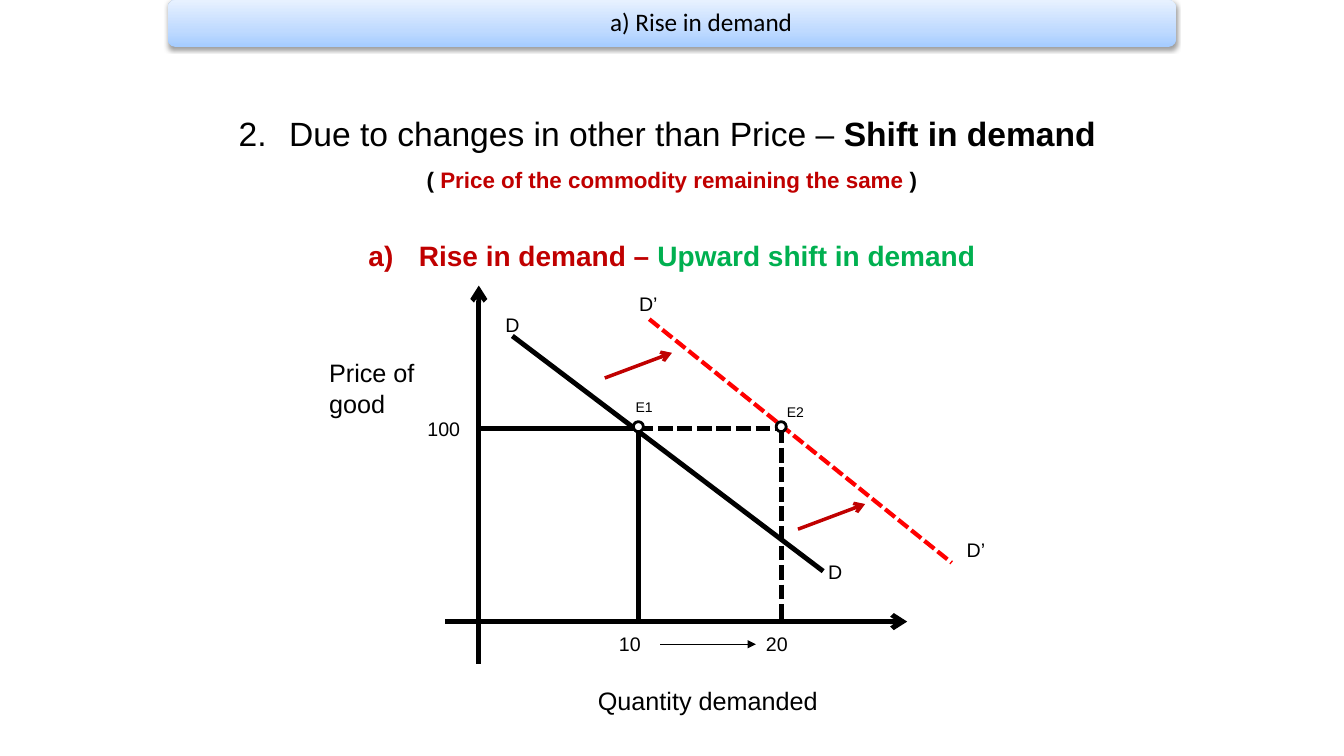
from lxml.etree import SubElement
from pptx import Presentation
from pptx.dml.color import RGBColor
from pptx.enum.dml import MSO_LINE_DASH_STYLE as Dash
from pptx.enum.shapes import MSO_CONNECTOR as Connector, MSO_SHAPE as Preset
from pptx.enum.text import MSO_ANCHOR as Anchor, PP_ALIGN as Align
from pptx.oxml.ns import qn
from pptx.util import Inches, Pt

COLUMNS, ROWS = 160, 90
CELL = Inches(1) / 12
BLACK, WHITE, RED, DARK_RED, GREEN = "000000", "FFFFFF", "FF0000", "C00000", "00B050"

# The diagram's columns and rows
PRICE_AXIS, QUANTITY_AXIS = 57, 74
OLD_QUANTITY, NEW_QUANTITY = 76, 93
PRICE = 51


def cells(*counts):
    return [round(count * CELL) for count in counts]


def color(hex_string):
    return RGBColor.from_string(hex_string)


def add_xml(parent, tag, **attributes):
    return SubElement(parent, qn(tag), {name: str(value) for name, value in attributes.items()})


def add_run(paragraph, text, size, hex_color=BLACK, bold=False, font="Arial"):
    run = paragraph.add_run()
    run.text = text
    run.font.name, run.font.size, run.font.bold = font, Pt(size), bold
    run.font.color.rgb = color(hex_color)


def add_label(slide, text, left, top, width, height, size=14):
    frame = slide.shapes.add_textbox(*cells(left, top, width, height)).text_frame
    frame.word_wrap = True
    add_run(frame.paragraphs[0], text, size)


def add_line(slide, start, end, hex_color=BLACK, width=3.5, dash=None, arrow=None):
    line = slide.shapes.add_connector(Connector.STRAIGHT, *cells(*start, *end))
    line.line.color.rgb = color(hex_color)
    line.line.width = Pt(width)
    if dash:
        line.line.dash_style = dash
    if arrow:
        add_xml(line.line._get_or_add_ln(), "a:tailEnd", type=arrow)
    add_xml(line._element.spPr, "a:effectLst")


def add_equilibrium(slide, column):
    size = 1.2
    marker = slide.shapes.add_shape(
        Preset.OVAL, *cells(column - size / 2, PRICE - 0.2 - size / 2, size, size))
    marker.shadow.inherit = False
    marker.fill.solid()
    marker.fill.fore_color.rgb = color(WHITE)
    marker.line.color.rgb = color(BLACK)
    marker.line.width = Pt(2)


def add_title_band(slide):
    band = slide.shapes.add_shape(Preset.ROUNDED_RECTANGLE, *cells(20, 0, 120, 5.6))
    band.line.fill.background()
    band.fill.background()
    properties = band._element.spPr

    gradient = properties.makeelement(qn("a:gradFill"), {"rotWithShape": "1"})
    stops = add_xml(gradient, "a:gsLst")
    for percent, hex_color in ((0, "A5CCFF"), (35, "BFDAFF"), (100, "E7F1FF")):
        add_xml(add_xml(stops, "a:gs", pos=percent * 1000), "a:srgbClr", val=hex_color)
    add_xml(gradient, "a:lin", ang=270 * 60000, scaled=0)
    properties.replace(properties.find(qn("a:noFill")), gradient)

    shadow = add_xml(add_xml(properties, "a:effectLst"), "a:outerShdw", blurRad=Pt(3.1),
                     dist=Pt(1.6), dir=90 * 60000, rotWithShape=0)
    add_xml(add_xml(shadow, "a:srgbClr", val=BLACK), "a:alpha", val=38000)

    frame = band.text_frame
    frame.vertical_anchor = Anchor.MIDDLE
    frame.margin_left, frame.margin_right = Inches(0.65), Inches(0.07)
    frame.margin_top = frame.margin_bottom = Inches(0.07)
    paragraph = frame.paragraphs[0]
    paragraph.alignment = Align.CENTER
    paragraph.line_spacing = 0.9
    add_run(paragraph, "a) Rise in demand", 18, font="Calibri")


def add_heading(paragraph, runs, size, numbering=None, space_before=0):
    """Fill a centred paragraph; numbering is a (scheme, first number) pair."""
    paragraph.alignment = Align.CENTER
    paragraph.line_spacing = 1.5
    paragraph.space_before = Pt(space_before)
    properties = paragraph._p.get_or_add_pPr()
    properties.set("marL", str(Inches(0.5)))
    properties.set("indent", str(-Inches(0.5)))
    if numbering:
        scheme, first = numbering
        add_xml(properties, "a:buFont", typeface="+mj-lt")
        add_xml(properties, "a:buAutoNum", type=scheme, startAt=first)
    for text, hex_color, bold in runs:
        add_run(paragraph, text, size, hex_color, bold)


def add_headings(slide):
    frame = slide.shapes.add_textbox(*cells(20, 10.4, 120, 22.2)).text_frame
    frame.word_wrap = True
    add_heading(frame.paragraphs[0], [
        ("Due to changes in other than Price – ", BLACK, False),
        ("Shift in demand ", BLACK, True)], 24, ("arabicPeriod", 2))
    add_heading(frame.add_paragraph(), [
        ("( ", BLACK, True),
        ("Price of the commodity remaining the same ", DARK_RED, True),
        (")", BLACK, True)], 16)
    add_heading(frame.add_paragraph(), [
        ("Rise in demand – ", DARK_RED, True),
        ("Upward shift in demand", GREEN, True)], 20, ("alphaLcParenR", 1), 20.7)


def add_diagram(slide):
    add_line(slide, (PRICE_AXIS, 79), (PRICE_AXIS, 34), arrow="arrow")
    add_line(slide, (53, QUANTITY_AXIS), (108, QUANTITY_AXIS), arrow="arrow")
    add_line(slide, (61, 40), (98, 68))
    add_line(slide, (77.3, 38), (113.3, 67), RED, 3, Dash.SQUARE_DOT)

    guides = ((PRICE_AXIS, OLD_QUANTITY, None), (OLD_QUANTITY, NEW_QUANTITY, Dash.SQUARE_DOT))
    for start, quantity, dash in guides:
        add_line(slide, (start, PRICE), (quantity, PRICE), dash=dash)
        add_line(slide, (quantity, PRICE), (quantity, QUANTITY_AXIS), dash=dash)
    for column, row in ((72, 45), (95, 63)):
        add_line(slide, (column, row), (column + 8, row - 3), DARK_RED, 2.5, arrow="arrow")
    add_line(slide, (78.6, 76.7), (90, 76.7), width=0.75, arrow="triangle")
    for quantity in (OLD_QUANTITY, NEW_QUANTITY):
        add_equilibrium(slide, quantity)


def add_diagram_labels(slide):
    add_label(slide, "Price of good", 38, 42, 14, 8.5, 18)
    add_label(slide, "Quantity demanded", 70, 81, 29, 4.8, 18)
    add_label(slide, "100", 49.7, 49, 7.3, 4)
    for text, left in (("10", 72.5), ("20", 90)):
        add_label(slide, text, left, 74.6, 9, 4)
    for text, left, top in (("E1", 74.5, 46.9), ("E2", 92.5, 47.4)):
        add_label(slide, text, left, top, 8, 3.2, 10)
    for text, left, top in (("D", 59, 36.6), ("D", 97.4, 66.1),
                            ("D’", 74.9, 34.1), ("D’", 113.9, 63.4)):
        add_label(slide, text, left, top, 5.5, 4)


def main():
    presentation = Presentation()
    presentation.slide_width, presentation.slide_height = cells(COLUMNS, ROWS)
    slide = presentation.slides.add_slide(presentation.slide_layouts[6])
    add_headings(slide)
    add_title_band(slide)
    add_diagram(slide)
    add_diagram_labels(slide)
    presentation.save("out.pptx")


if __name__ == "__main__":
    main()
